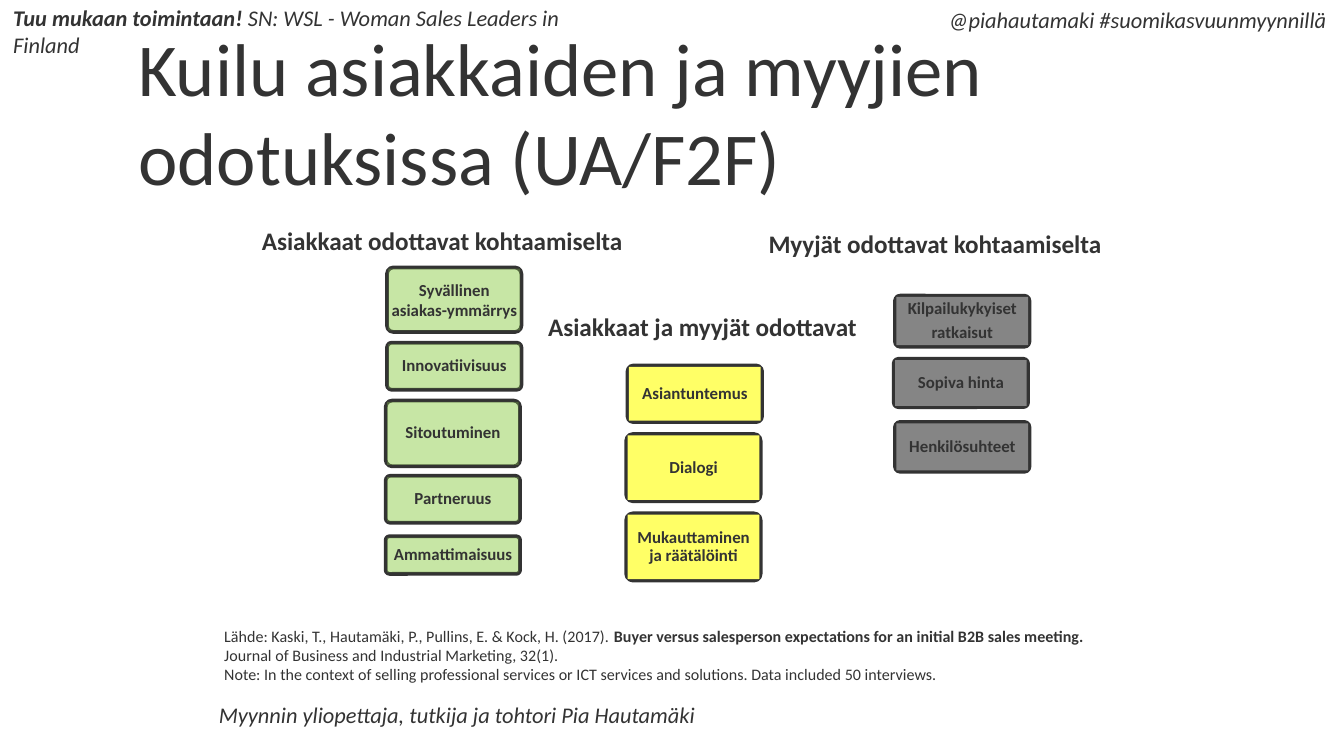
from lxml import etree
from pptx import Presentation
from pptx.dml.color import RGBColor
from pptx.enum import shapes, text
from pptx.oxml import ns
from pptx.util import Inches, Pt

INK = RGBColor(0x33, 0x33, 0x33)
GREEN = RGBColor(0x92, 0xD0, 0x50)
YELLOW = RGBColor(0xFF, 0xFF, 0x66)
GREY = RGBColor(0x85, 0x85, 0x85)
FONT = "Calibri"
SLIDE_WIDTH = Inches(10)
SLIDE_HEIGHT = SLIDE_WIDTH * 9 // 16
BOX_WIDTH = 1
LABEL_INSET = 0.01

TITLE = "Kuilu asiakkaiden ja myyjien odotuksissa (UA/F2F)"
BANNERS = [
    ((1.53, 5.17, 8.12, 0.3), [("Myynnin yliopettaja, tutkija ja tohtori Pia Hautamäki", False)]),
    ((6.96, 0, 8.12, 0.3), [("@piahautamaki #suomikasvuunmyynnillä", False)]),
    ((0, -0.02, 4.73, 0.3), [("Tuu mukaan toimintaan! ", True),
                             ("SN: WSL - Woman Sales Leaders in Finland", False)]),
]
HEADINGS = [
    ((3.98, 2.27, 2.53, 0.33), "Asiakkaat ja myyjät odottavat"),
    ((1.85, 1.63, 2.92, 0.33), "Asiakkaat odottavat kohtaamiselta"),
    ((5.62, 1.65, 2.71, 0.33), "Myyjät odottavat kohtaamiselta"),
]
COLUMNS = [
    (GREY, None, [
        (6.66, 3.14, 0.37, ["Henkilösuhteet"], 0.9),
        (6.65, 2.67, 0.36, ["Sopiva hinta"], 0.9),
        (6.66, 2.2, 0.38, ["Kilpailukykyiset", "ratkaisut"], 0.9),
    ]),
    (YELLOW, None, [
        (4.66, 3.23, 0.5, ["Dialogi"], 0.9),
        (4.66, 3.82, 0.5, ["Mukauttaminen ja räätälöinti"], 0.9),
        (4.67, 2.72, 0.42, ["Asiantuntemus"], 0.9),
    ]),
    (GREEN, 30, [
        (2.88, 1.99, 0.48, ["Syvällinen asiakas-ymmärrys"], 1.0),
        (2.88, 2.55, 0.35, ["Innovatiivisuus"], 0.9),
        (2.87, 2.98, 0.49, ["Sitoutuminen"], 0.9),
        (2.87, 3.54, 0.35, ["Partneruus"], 0.9),
        (2.87, 3.99, 0.28, ["Ammattimaisuus"], 0.9),
    ]),
]
SOURCE = [
    [("Lähde: Kaski, T., Hautamäki, P., Pullins, E. & Kock, H. (2017). ", False),
     ("Buyer versus salesperson expectations for an initial B2B sales meeting.", True)],
    [("Journal of Business and Industrial Marketing, 32(1).", False)],
    [("Note: In the context of selling professional services or ICT services and solutions. "
      "Data included 50 interviews.", False)],
]


def write(frame, paragraphs, size, italic=False, align=text.PP_ALIGN.LEFT,
          line_spacing=None, space_after=None):
    frame.word_wrap = True
    for index, runs in enumerate(paragraphs):
        paragraph = frame.add_paragraph() if index else frame.paragraphs[0]
        paragraph.alignment = align
        paragraph.line_spacing = line_spacing
        paragraph.space_after = space_after
        for content, bold in runs:
            run = paragraph.add_run()
            run.text = content
            font = run.font
            font.name, font.size = FONT, Pt(size)
            font.bold, font.italic = bold, italic
            font.color.rgb = INK


def add_text(slide, place, paragraphs, size, **style):
    shape = slide.shapes.add_textbox(*map(Inches, place))
    write(shape.text_frame, paragraphs, size, **style)


def add_filled(group, kind, place, color, opacity):
    shape = group.shapes.add_shape(kind, *map(Inches, place))
    shape.shadow.inherit = False
    shape.fill.solid()
    shape.fill.fore_color.rgb = color
    if opacity is not None:
        rgb = shape.element.spPr.find(".//" + ns.qn("a:srgbClr"))
        etree.SubElement(rgb, ns.qn("a:alpha")).set("val", str(opacity * 1000))
    return shape


def add_box(slide, left, top, height, lines, line_spacing, color, opacity):
    group = slide.shapes.add_group_shape()
    frame = add_filled(group, shapes.MSO_SHAPE.ROUNDED_RECTANGLE,
                       (left, top, BOX_WIDTH, height), color, opacity)
    frame.adjustments[0] = 0.1
    frame.line.color.rgb = INK
    frame.line.width = Pt(2)
    label = add_filled(group, shapes.MSO_SHAPE.RECTANGLE,
                       (left + LABEL_INSET, top + LABEL_INSET,
                        BOX_WIDTH - 2 * LABEL_INSET, height - 2 * LABEL_INSET), color, opacity)
    label.line.fill.background()
    body = label.text_frame
    body.margin_left = body.margin_right = body.margin_top = body.margin_bottom = Inches(0.02)
    body.vertical_anchor = text.MSO_ANCHOR.MIDDLE
    write(body, [[(line, True)] for line in lines], 9, align=text.PP_ALIGN.CENTER,
          line_spacing=line_spacing, space_after=Pt(3))


def main():
    presentation = Presentation()
    presentation.slide_width, presentation.slide_height = SLIDE_WIDTH, SLIDE_HEIGHT
    slide = presentation.slides.add_slide(presentation.slide_layouts[5])

    title = slide.shapes.title
    title.left, title.top, title.width, title.height = map(Inches, (0.93, 0.11, 8.63, 0.82))
    title.text_frame.auto_size = text.MSO_AUTO_SIZE.NONE
    title.text_frame.vertical_anchor = text.MSO_ANCHOR.TOP
    write(title.text_frame, [[(TITLE, False)]], 40)

    for place, runs in BANNERS:
        add_text(slide, place, [runs], 12, italic=True)
    for color, opacity, boxes in COLUMNS:
        for box in boxes:
            add_box(slide, *box, color, opacity)
    for place, heading in HEADINGS:
        add_text(slide, place, [[(heading, True)]], 13.5)
    add_text(slide, (1.57, 4.61, 8.23, 0.96), SOURCE, 8.6)

    presentation.save("out.pptx")


if __name__ == "__main__":
    main()
